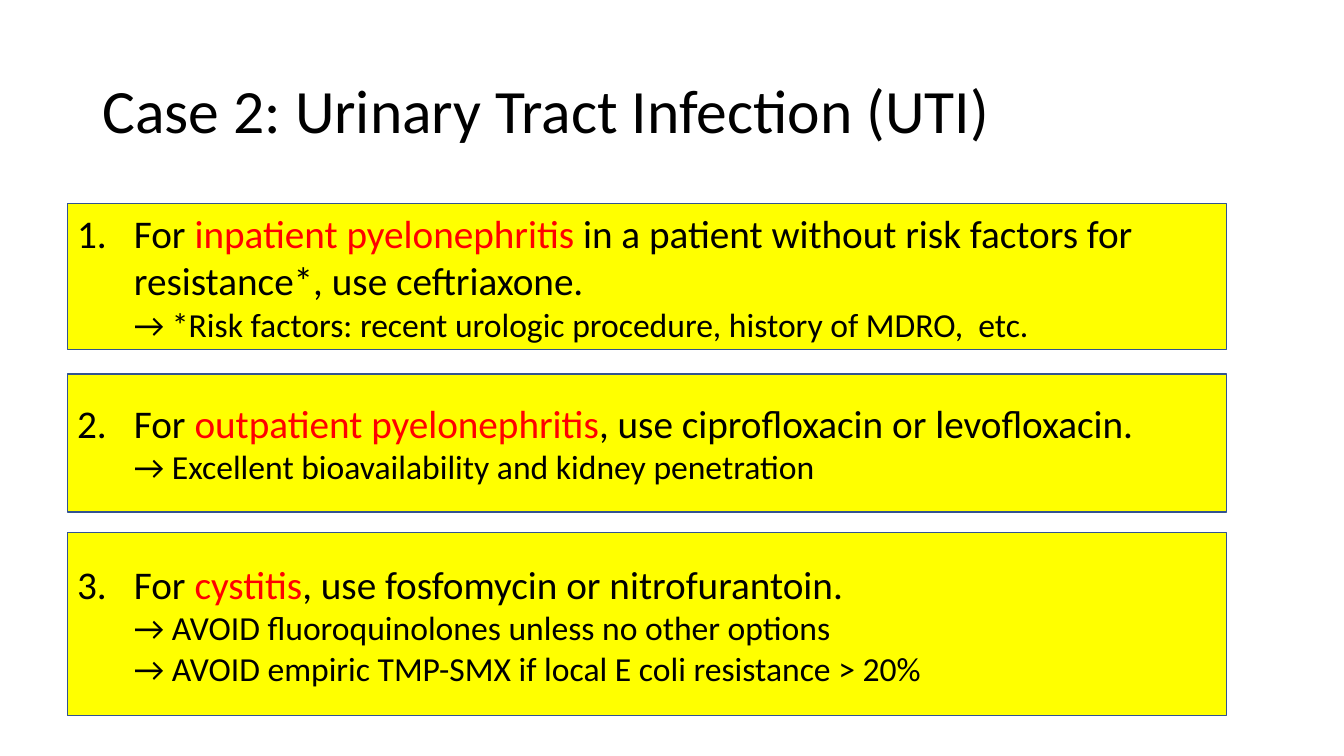
from dataclasses import dataclass

from lxml import etree
from pptx import Presentation
from pptx import util as u
from pptx.dml.color import RGBColor
from pptx.enum import shapes, text
from pptx.oxml.ns import qn

COLORS = {"text": "000000", "key": "FF0000", "box": "FFFF00", "edge": "325491"}
SLIDE_W, SLIDE_H = u.Inches(13.33), u.Inches(7.5)
COLUMNS, ROWS = 80, 45
BOX_LEFT, BOX_WIDTH, HANGING = 4, 69, 3.38  # columns


@dataclass
class Advice:
    top: float  # rows
    height: float  # rows
    condition: str
    treatment: str
    notes: tuple[str, ...]


ADVICE = [
    Advice(12.12, 8.7, "inpatient pyelonephritis ",
           "in a patient without risk factors for resistance*, use ceftriaxone.",
           ("→ *Risk factors: recent urologic procedure, history of MDRO,  etc.",)),
    Advice(22.26, 8.22, "outpatient pyelonephritis",
           ", use ciprofloxacin or levofloxacin.",
           ("→ Excellent bioavailability and kidney penetration",)),
    Advice(31.68, 10.92, "cystitis", ", use fosfomycin or nitrofurantoin.",
           ("→ AVOID fluoroquinolones unless no other options",
            "→ AVOID empiric TMP-SMX if local E coli resistance > 20%")),
]


def col(n: float) -> int:
    return round(SLIDE_W * n / COLUMNS)


def row(n: float) -> int:
    return round(SLIDE_H * n / ROWS)


def rgb(name: str) -> RGBColor:
    return RGBColor.from_string(COLORS[name])


def apply(target, values: dict) -> None:
    for name, value in values.items():
        setattr(target, name, value)


def add_words(paragraph, words: str, size: int, color: str = "text") -> None:
    run = paragraph.add_run()
    run.text = words
    apply(run.font, {"name": "Calibri", "size": u.Pt(size)})
    run.font.color.rgb = rgb(color)


def number_paragraph(paragraph, number: int) -> None:
    """Give the paragraph a hanging automatic number."""
    props = paragraph._p.get_or_add_pPr()
    props.set("marL", str(col(HANGING)))
    props.set("indent", str(-col(HANGING)))
    bullet = etree.SubElement(props, qn("a:buAutoNum"), type="arabicPeriod")
    if number > 1:
        bullet.set("startAt", str(number))


def add_advice(slide, number: int, advice: Advice) -> None:
    box = slide.shapes.add_shape(
        shapes.MSO_SHAPE.RECTANGLE, col(BOX_LEFT), row(advice.top),
        col(BOX_WIDTH), row(advice.height))
    box.shadow.inherit = False
    box.fill.solid()
    box.fill.fore_color.rgb = rgb("box")
    box.line.color.rgb = rgb("edge")
    box.line.width = u.Pt(1)
    apply(box.text_frame, {"word_wrap": True,
                           "vertical_anchor": text.MSO_ANCHOR.MIDDLE})

    recommendation = box.text_frame.paragraphs[0]
    recommendation.alignment = text.PP_ALIGN.LEFT
    number_paragraph(recommendation, number)
    add_words(recommendation, "For ", 28)
    add_words(recommendation, advice.condition, 28, "key")
    add_words(recommendation, advice.treatment, 28)
    for note in advice.notes:
        recommendation.add_line_break()
        add_words(recommendation, note, 24)


def add_title(slide, words: str) -> None:
    title = slide.shapes.title
    apply(title, {"left": col(5.5), "top": row(2.4),
                  "width": col(69), "height": row(8.7)})
    apply(title.text_frame, {"word_wrap": True,
                             "auto_size": text.MSO_AUTO_SIZE.NONE,
                             "vertical_anchor": text.MSO_ANCHOR.MIDDLE})
    heading = title.text_frame.paragraphs[0]
    apply(heading, {"alignment": text.PP_ALIGN.LEFT, "line_spacing": 0.9})
    add_words(heading, words, 44)


def main() -> None:
    deck = Presentation()
    apply(deck, {"slide_width": SLIDE_W, "slide_height": SLIDE_H})
    slide = deck.slides.add_slide(deck.slide_layouts.get_by_name("Title Only"))

    # Heading
    add_title(slide, "Case 2: Urinary Tract Infection (UTI)")

    # Numbered recommendations
    for number, advice in enumerate(ADVICE, start=1):
        add_advice(slide, number, advice)

    deck.save("out.pptx")


if __name__ == "__main__":
    main()
